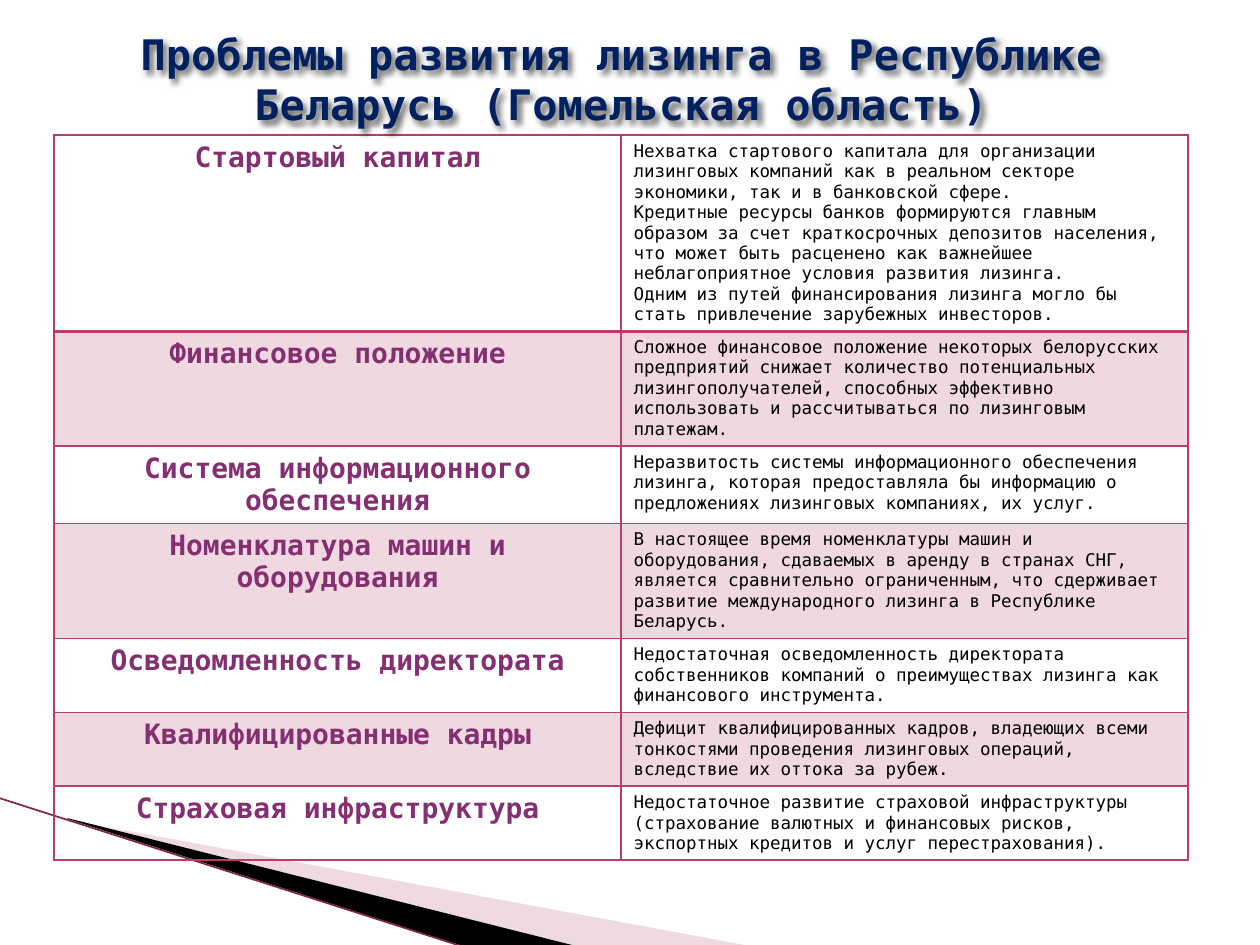
from pptx import Presentation
from pptx.dml.color import RGBColor
from pptx.enum.shapes import MSO_CONNECTOR
from pptx.enum.text import MSO_ANCHOR, PP_ALIGN
from pptx.oxml import parse_xml
from pptx.oxml.ns import nsdecls
from pptx.util import Pt

PX = 914400 / 126
FONT = "DejaVu Sans Mono"
ROSE = "B83D68"
NS = nsdecls("a")


def paint(fill, color, alpha=100):
    fill.solid()
    fill.fore_color.rgb = RGBColor.from_string(color)
    if alpha < 100:
        node = fill._xPr.find(".//{*}srgbClr")
        node.append(parse_xml(f'<a:alpha {NS} val="{alpha * 1000}"/>'))


def style(para, size, color, bold, align):
    para.alignment = align
    for run in para.runs:
        run.font.name = FONT
        run.font.size = Pt(size)
        run.font.bold = bold
        paint(run.font.fill, color)


deck = Presentation()
deck.slide_width, deck.slide_height = round(1260 * PX), round(945 * PX)
slide = deck.slides.add_slide(deck.slide_layouts[5])
shapes = slide.shapes

wedges = [
    ([(69, 820), (750, 946), (575, 946), (69, 819)], "D8A3AF", 40),
    ([(67, 818), (576, 946), (469, 948), (68, 819)], "000000", 100),
]
for points, color, alpha in wedges:
    path = shapes.build_freeform(*points[0], scale=PX)
    path.add_line_segments(points[1:])
    wedge = path.convert_to_shape()
    wedge.shadow.inherit = False
    wedge.line.fill.background()
    paint(wedge.fill, color, alpha)

edge = shapes.add_connector(
    MSO_CONNECTOR.STRAIGHT, *[round(n * PX) for n in (-1, 798, 467, 948)])
edge._element.spPr.append(parse_xml(f"<a:effectLst {NS}/>"))
paint(edge.line.fill, "7D2548")
edge.line.width = Pt(0.95)

rows = [
    (196, "Стартовый капитал",
     "Нехватка стартового капитала для организации лизинговых компаний как в "
     "реальном секторе экономики, так и в банковской сфере.\n"
     "Кредитные ресурсы банков формируются главным образом за счет "
     "краткосрочных депозитов населения, что может быть расценено как "
     "важнейшее неблагоприятное условия развития лизинга.\n"
     "Одним из путей финансирования лизинга могло бы стать привлечение "
     "зарубежных инвесторов."),
    (115, "Финансовое положение",
     "Сложное финансовое положение некоторых белорусских предприятий снижает "
     "количество потенциальных лизингополучателей, способных эффективно "
     "использовать и рассчитываться по лизинговым платежам."),
    (77, "Система информационного обеспечения",
     "Неразвитость системы информационного обеспечения лизинга, которая "
     "предоставляла бы информацию о предложениях лизинговых компаниях, их услуг."),
    (115, "Номенклатура машин и оборудования",
     "В настоящее время номенклатуры машин и оборудования, сдаваемых в аренду "
     "в странах СНГ, является сравнительно ограниченным, что сдерживает "
     "развитие международного лизинга в Республике Беларусь."),
    (74, "Осведомленность директората",
     "Недостаточная осведомленность директората собственников компаний о "
     "преимуществах лизинга как финансового инструмента."),
    (73, "Квалифицированные кадры",
     "Дефицит квалифицированных кадров, владеющих всеми тонкостями проведения "
     "лизинговых операций, вследствие их оттока за рубеж."),
    (74, "Страховая инфраструктура",
     "Недостаточное развитие страховой инфраструктуры (страхование валютных и "
     "финансовых рисков, экспортных кредитов и услуг перестрахования)."),
]
frame = shapes.add_table(
    len(rows), 2, *[round(n * PX) for n in (54, 135, 1134, 724)])
table = frame.table
table.first_row = table.horz_banding = False
for col in table.columns:
    col.width = round(567 * PX)

for r, (height, head, body) in enumerate(rows):
    table.rows[r].height = round(height * PX)
    for c, text in enumerate((head, body)):
        cell = table.cell(r, c)
        cell.text_frame.text = text
        for para in cell.text_frame.paragraphs:
            if c == 0:
                style(para, 16, "852F73", True, PP_ALIGN.CENTER)
            else:
                style(para, 10, "000000", False, PP_ALIGN.LEFT)
        if r % 2:
            paint(cell.fill, ROSE, 20)
        else:
            cell.fill.background()
        props = cell._tc.get_or_add_tcPr()
        for i, side in enumerate("LRTB"):
            thick = (r, side) in ((0, "B"), (1, "T"))
            props.insert(i, parse_xml(
                f'<a:ln{side} {NS} w="{Pt(2 if thick else 1)}"><a:solidFill>'
                f'<a:srgbClr val="{ROSE}"/></a:solidFill></a:ln{side}>'))

title = shapes.title
title.left, title.top, title.width, title.height = [
    round(n * PX) for n in (54, 0, 1134, 158)]
title.text_frame.text = "Проблемы развития лизинга в Республике Беларусь (Гомельская область)"
title.text_frame.word_wrap = True
title.text_frame.vertical_anchor = MSO_ANCHOR.MIDDLE
style(title.text_frame.paragraphs[0], 24, "002060", True, PP_ALIGN.CENTER)
title._element.spPr.append(parse_xml(
    f'<a:effectLst {NS}><a:outerShdw blurRad="50800" dist="38100" dir="2700000">'
    '<a:srgbClr val="000000"><a:alpha val="60000"/></a:srgbClr>'
    '</a:outerShdw></a:effectLst>'))
shapes._spTree.append(title._element)

deck.save("out.pptx")
